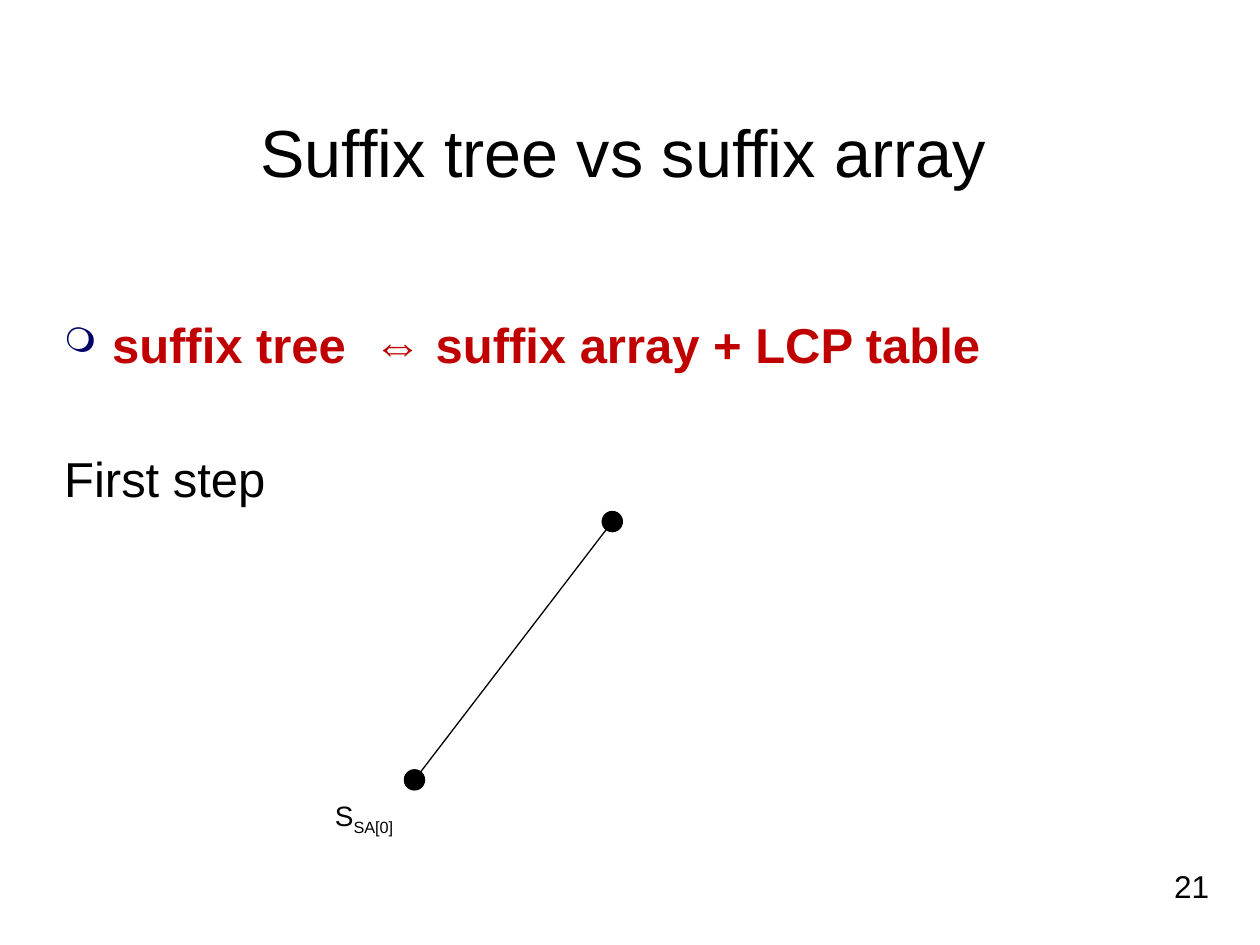
from lxml import etree
from pptx import Presentation
from pptx import util as u
from pptx.dml.color import RGBColor
from pptx.enum import shapes, text
from pptx.oxml.ns import qn

COLORS = {"ink": "000000", "accent": "C00000", "bullet": "000066"}


class SlideBuilder:
    """Holds the style and the slide being filled."""

    font = "Arial"
    line_width = u.Pt(0.75)

    def __init__(self, page):
        self.page = page

    def color(self, name):
        return RGBColor.from_string(COLORS[name])

    def text_box(self, left, top, width, height, inset=(0.1, 0.05), wrap=True):
        box = self.page.shapes.add_textbox(
            u.Inches(left), u.Inches(top), u.Inches(width), u.Inches(height))
        frame = box.text_frame
        frame.word_wrap = wrap
        frame.margin_left = frame.margin_right = u.Inches(inset[0])
        frame.margin_top = frame.margin_bottom = u.Inches(inset[1])
        return frame

    def style(self, para, size, color="ink", bold=False):
        for span in para.runs:
            span.font.name = self.font
            span.font.size = u.Pt(size)
            span.font.bold = bold
            span.font.color.rgb = self.color(color)

    def bullet(self, para, char, indent):
        props = para._p.get_or_add_pPr()
        props.set("marL", str(u.Inches(indent)))
        props.set("indent", str(-u.Inches(indent)))
        tint = etree.SubElement(props, qn("a:buClr"))
        etree.SubElement(tint, qn("a:srgbClr"), val=COLORS["bullet"])
        etree.SubElement(props, qn("a:buSzPct"), val="70000")
        etree.SubElement(props, qn("a:buChar"), char=char)

    def edge(self, start, end):
        line = self.page.shapes.add_connector(
            shapes.MSO_CONNECTOR.STRAIGHT, *map(u.Inches, start + end))
        line.line.color.rgb = self.color("ink")
        line.line.width = self.line_width
        etree.SubElement(line._element.spPr, qn("a:effectLst"))

    def node(self, center, size=0.16):
        x, y = center
        dot = self.page.shapes.add_shape(
            shapes.MSO_SHAPE.OVAL, u.Inches(x - size / 2), u.Inches(y - size / 2),
            u.Inches(size), u.Inches(size))
        dot.shadow.inherit = False
        dot.fill.solid()
        dot.fill.fore_color.rgb = dot.line.color.rgb = self.color("ink")
        dot.line.width = self.line_width


def main():
    deck = Presentation()
    deck.slide_width, deck.slide_height = u.Inches(10), u.Inches(7.5)
    builder = SlideBuilder(deck.slides.add_slide(deck.slide_layouts[6]))

    number = builder.text_box(9.22, 6.83, 0.64, 0.52)
    number.text = "21"
    builder.style(number.paragraphs[0], 18)

    title = builder.text_box(0.23, 0.7, 9.44, 1.09, (0.09, 0.04))
    title.text = "Suffix tree vs suffix array"
    title.vertical_anchor = text.MSO_ANCHOR.MIDDLE
    heading = title.paragraphs[0]
    heading.alignment = text.PP_ALIGN.CENTER
    heading.line_spacing = 0.85
    builder.style(heading, 38)

    body = builder.text_box(0.42, 2.53, 9.07, 4.5, (0.09, 0.04))
    claim, step = body.paragraphs[0], body.add_paragraph()
    claim.line_spacing = step.line_spacing = 0.85
    builder.bullet(claim, "❍", 0.38)
    for part in ("suffix tree", " ", "⇔ suffix array + LCP table"):
        claim.add_run().text = part
    builder.style(claim, 28, "accent", bold=True)
    # Widen the space before the arrow
    claim.runs[1].font._element.set("spc", "780")
    step.text = "First step"
    step.space_before = u.Pt(48)
    builder.style(step, 28)

    root, leaf = (4.86, 4.14), (3.29, 6.19)
    builder.edge(root, leaf)
    label = builder.text_box(2.56, 6.29, 0.78, 0.4, wrap=False)
    label.auto_size = text.MSO_AUTO_SIZE.SHAPE_TO_FIT_TEXT
    suffix = label.paragraphs[0]
    for part in ("S", "SA[0]"):
        suffix.add_run().text = part
    builder.style(suffix, 16)
    suffix.runs[1].font._element.set("baseline", "-25000")
    for center in (root, leaf):
        builder.node(center)

    deck.save("out.pptx")


if __name__ == "__main__":
    main()
